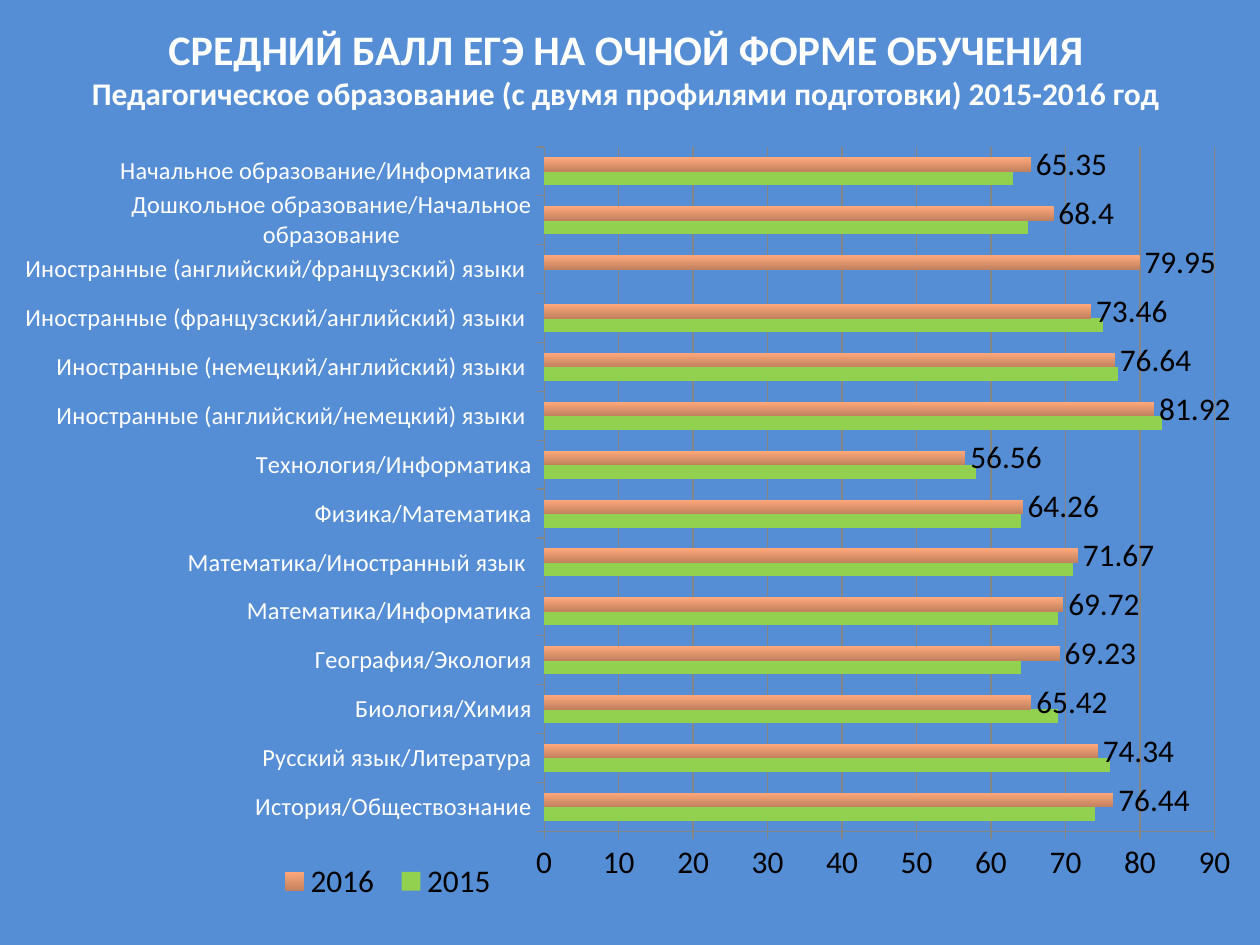
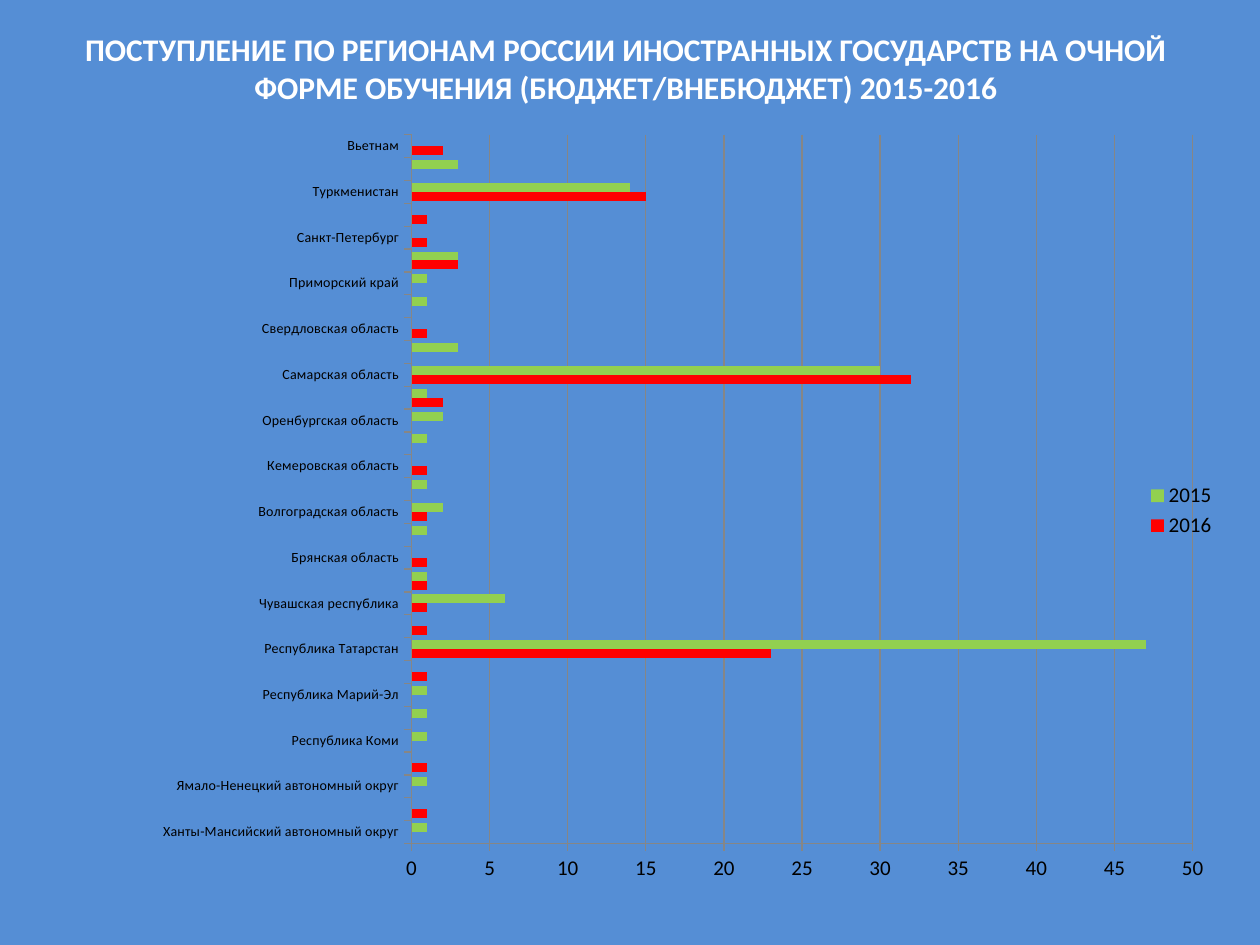
from copy import deepcopy

from lxml.etree import SubElement
from pptx import Presentation
from pptx.chart.data import CategoryChartData as ChartData
from pptx.dml.color import RGBColor
from pptx.enum.chart import XL_CHART_TYPE as ChartType
from pptx.enum.chart import XL_LABEL_POSITION as LabelPosition
from pptx.enum.chart import XL_LEGEND_POSITION as LegendPosition
from pptx.enum.chart import XL_TICK_MARK as TickMark
from pptx.enum.text import MSO_ANCHOR as Anchor
from pptx.enum.text import PP_ALIGN as Align
from pptx.oxml import parse_xml
from pptx.oxml.ns import nsdecls, qn
from pptx.util import Cm, Pt

FONT = "Calibri"
BLUE, WHITE, BLACK = "558ED5", "FFFFFF", "000000"
GREEN, RED, GRID = "92D050", "FF0000", "868686"
ORANGE_GRADIENT = ("FFA87B", "C2825F")

SCORES = [
    ("История/Обществознание", 74, 76.44),
    ("Русский язык/Литература", 76, 74.34),
    ("Биология/Химия", 69, 65.42),
    ("География/Экология", 64, 69.23),
    ("Математика/Информатика", 69, 69.72),
    ("Математика/Иностранный язык ", 71, 71.67),
    ("Физика/Математика", 64, 64.26),
    ("Технология/Информатика", 58, 56.56),
    ("Иностранные (английский/немецкий) языки ", 83, 81.92),
    ("Иностранные (немецкий/английский) языки ", 77, 76.64),
    ("Иностранные (французский/английский) языки ", 75, 73.46),
    ("Иностранные (английский/французский) языки ", None, 79.95),
    ("Дошкольное образование/Начальное образование", 65, 68.4),
    ("Начальное образование/Информатика", 63, 65.35),
]

REGIONS = [
    ("Ханты-Мансийский автономный округ", None, 1),
    ("Чукотский автономный округ", 1, None),
    ("Ямало-Ненецкий автономный округ", None, 1),
    ("Республика Башкортастан", 1, None),
    ("Республика Коми", None, 1),
    ("Республика Крым", None, 1),
    ("Республика Марий-Эл", None, 1),
    ("Республика Мордовия", 1, None),
    ("Республика Татарстан", 23, 47),
    ("Республика Удмурдия", 1, None),
    ("Чувашская республика", 1, 6),
    ("Красноярский край", 1, 1),
    ("Брянская область", 1, None),
    ("Астраханская\n область", None, 1),
    ("Волгоградская область", 1, 2),
    ("Калужская область", None, 1),
    ("Кемеровская область", 1, None),
    ("Костромская область", None, 1),
    ("Оренбургская область", None, 2),
    ("Пензенская область", 2, 1),
    ("Самарская область", 32, 30),
    ("Саратовская область", None, 3),
    ("Свердловская область", 1, None),
    ("Челябинская область", None, 1),
    ("Приморский край", None, 1),
    ("г.Москва, Московская область", 3, 3),
    ("Санкт-Петербург", 1, None),
    ("Китай", 1, None),
    ("Туркменистан", 15, 14),
    ("Украина", None, 3),
    ("Вьетнам", 2, None),
]


def rgb(color):
    return RGBColor.from_string(color)


def style_font(font, size, color, bold=False):
    font.name = FONT
    font.size = Pt(size)
    font.bold = bold
    font.color.rgb = rgb(color)


def add_titled_slide(presentation, text, sizes):
    slide = presentation.slides.add_slide(presentation.slide_layouts[5])
    title = slide.shapes.title
    title.left, title.top = Cm(1.19), Cm(0.36)
    title.width, title.height = Cm(22.86), Cm(2.01)
    title.text_frame.text = text
    title.text_frame.vertical_anchor = Anchor.MIDDLE
    paragraph = title.text_frame.paragraphs[0]
    paragraph.alignment = Align.CENTER
    for run, size in zip(paragraph.runs, sizes):
        style_font(run.font, size, WHITE, bold=True)
    return slide


def manual_layout(percent_box, inner=False):
    layout = parse_xml(f"<c:layout {nsdecls('c')}><c:manualLayout/></c:layout>")
    settings = [("layoutTarget", "inner")] if inner else []
    settings += [("xMode", "edge"), ("yMode", "edge")]
    settings += [(name, round(value / 100, 3)) for name, value in zip("xywh", percent_box)]
    for name, value in settings:
        SubElement(layout[0], qn(f"c:{name}")).set("val", str(value))
    return layout


def remove_layout(element):
    for layout in element.findall(qn("c:layout")):
        element.remove(layout)


def place_plot(chart, percent_box):
    plot_area = chart.element.chart.plotArea
    remove_layout(plot_area)
    plot_area.insert(0, manual_layout(percent_box, inner=True))


def place_legend(chart, percent_box):
    legend = chart.element.chart.find(qn("c:legend"))
    remove_layout(legend)
    legend.find(qn("c:legendPos")).addnext(manual_layout(percent_box))


def style_axes(chart, category_size, category_color, maximum, step):
    category_axis, value_axis = chart.category_axis, chart.value_axis
    style_font(category_axis.tick_labels.font, category_size, category_color)
    value_axis.minimum_scale, value_axis.maximum_scale = 0, maximum
    value_axis.major_unit = step
    value_axis.has_major_gridlines = True
    category_axis.has_major_gridlines = False
    for axis in (category_axis, value_axis):
        axis.major_tick_mark = TickMark.OUTSIDE
        axis.minor_tick_mark = TickMark.NONE
    for styled in (category_axis, value_axis, value_axis.major_gridlines):
        styled.format.line.color.rgb = rgb(GRID)
        styled.format.line.width = Pt(0.75)


def add_bar_chart(slide, box, rows, years, size, gap, plot_box):
    categories, *columns = zip(*rows)
    data = ChartData()
    data.categories = categories
    for year, values in zip(years, columns):
        data.add_series(year, values)
    frame = slide.shapes.add_chart(ChartType.BAR_CLUSTERED, *map(Cm, box), data)
    chart = frame.chart
    chart.has_title = False
    style_font(chart.font, size, BLACK)
    plot = chart.plots[0]
    plot.gap_width, plot.overlap = gap, 0
    plot.vary_by_categories = False
    place_plot(chart, plot_box)
    return chart


def split_last_series(chart):
    first_plot = chart.element.chart.plotArea.find(qn("c:barChart"))
    second_plot = deepcopy(first_plot)
    first_plot.addnext(second_plot)
    first_plot.remove(first_plot.findall(qn("c:ser"))[-1])
    for series in second_plot.findall(qn("c:ser"))[:-1]:
        second_plot.remove(series)


def add_legend(chart, position, overlay=False):
    chart.has_legend = True
    chart.legend.position = position
    chart.legend.include_in_layout = overlay


def fill_series(series, color):
    series.invert_if_negative = False
    series.format.fill.solid()
    series.format.fill.fore_color.rgb = rgb(color)


def shade_series(series, colors):
    series.invert_if_negative = False
    fill = series.format.fill
    fill.gradient()
    fill.gradient_angle = 270
    for stop, color in zip(fill.gradient_stops, colors):
        stop.color.rgb = rgb(color)


def label_values(series, size):
    labels = series.data_labels
    labels.show_value = True
    labels.position = LabelPosition.OUTSIDE_END
    style_font(labels.font, size, BLACK)


def add_scores_slide(presentation):
    slide = add_titled_slide(
        presentation,
        "СРЕДНИЙ БАЛЛ ЕГЭ НА ОЧНОЙ ФОРМЕ ОБУЧЕНИЯ\v"
        "Педагогическое образование (с двумя профилями подготовки) 2015-2016 год",
        (24, 18),
    )
    chart = add_bar_chart(slide, (0.51, 2.39, 24.61, 15.95), SCORES,
                          ("2015", "2016"), 18, 150, (42.1, 3.6, 55.3, 86.5))
    style_axes(chart, 14, WHITE, 90, 10)
    add_legend(chart, LegendPosition.BOTTOM, overlay=True)
    place_legend(chart, (19.3, 92.9, 19.8, 7))
    earlier, later = chart.plots[0].series
    fill_series(earlier, GREEN)
    shade_series(later, ORANGE_GRADIENT)
    label_values(later, 18)


def add_regions_slide(presentation):
    slide = add_titled_slide(
        presentation,
        "ПОСТУПЛЕНИЕ ПО РЕГИОНАМ РОССИИ ИНОСТРАННЫХ ГОСУДАРСТВ НА ОЧНОЙ "
        "ФОРМЕ ОБУЧЕНИЯ (БЮДЖЕТ/ВНЕБЮДЖЕТ) 2015-2016",
        (18,),
    )
    chart = add_bar_chart(slide, (0.51, 2.13, 24.26, 16.33), REGIONS,
                          ("2016", "2015"), 12, 55, (32.1, 3.6, 64.9, 87.5))
    style_axes(chart, 8, BLACK, 50, 5)
    add_legend(chart, LegendPosition.RIGHT)
    for series, color in zip(chart.plots[0].series, (RED, GREEN)):
        fill_series(series, color)
    split_last_series(chart)


def main():
    presentation = Presentation()
    presentation.slide_width, presentation.slide_height = Cm(25.4), Cm(19.05)
    background = presentation.slide_master.background.fill
    background.solid()
    background.fore_color.rgb = rgb(BLUE)
    add_scores_slide(presentation)
    add_regions_slide(presentation)
    presentation.save("out.pptx")


if __name__ == "__main__":
    main()
